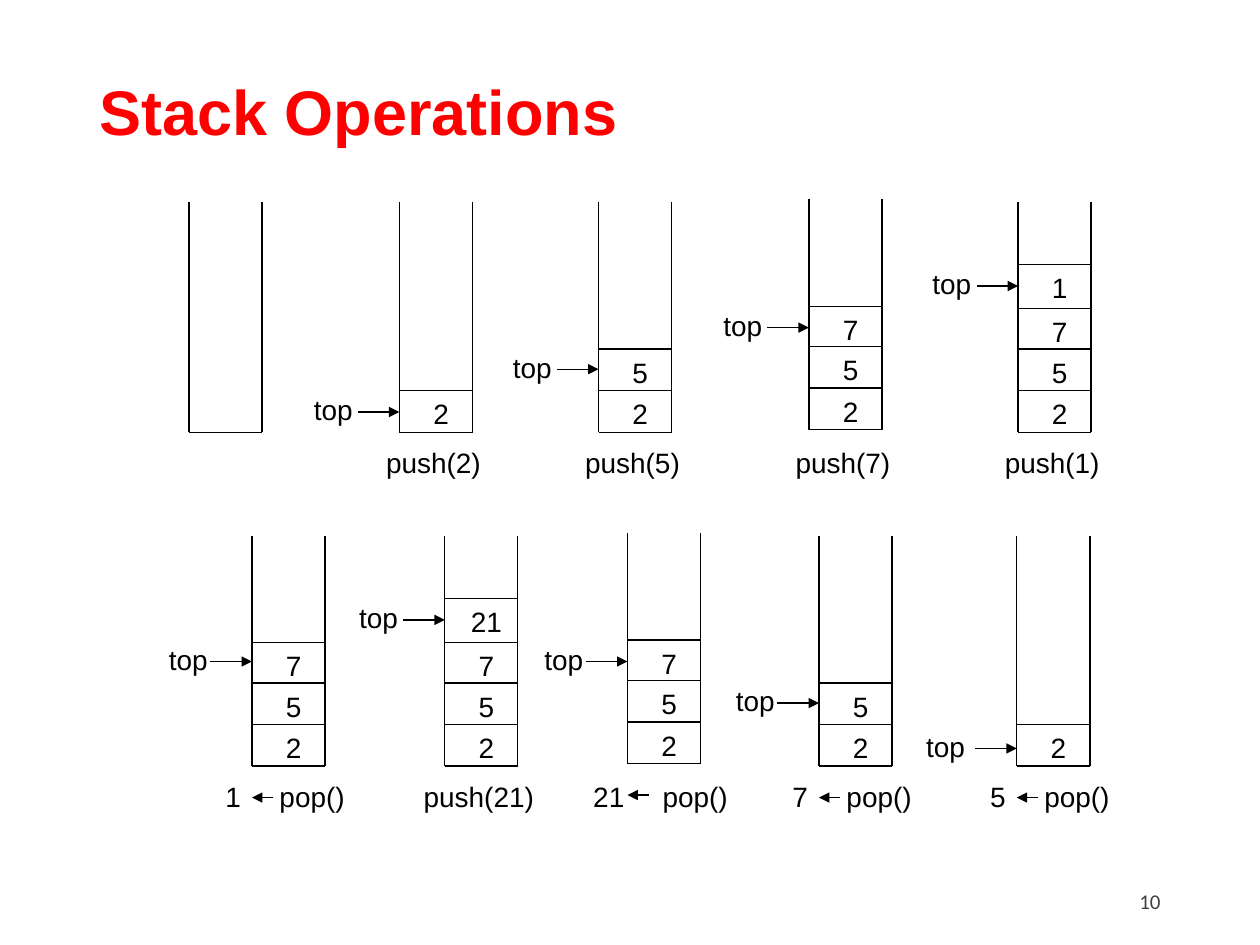
from dataclasses import dataclass

from lxml import etree
from pptx import Presentation
from pptx import util as u
from pptx.dml.color import RGBColor
from pptx.enum import shapes, text
from pptx.oxml import ns

RED = RGBColor(0xFF, 0x00, 0x00)
BLACK = RGBColor(0x00, 0x00, 0x00)
GRAY = RGBColor(0x40, 0x40, 0x40)

WIDTH = 0.58
HEIGHT = 1.83
LEVELS = (1.5, 1.17, 0.85, 0.5)  # upper edge of each cell, below the rim
ARROWS = (1.67, 1.33, 1.0, 0.67)  # arrow to the top cell, below the row start
LABEL = 0.37  # height of a one-line label


@dataclass
class Stack:
    x: float
    cells: tuple = ()  # from the bottom up
    call: str = ""
    popped: str = ""
    lift: float = 0.0  # how far the stack sits above its row
    gap: float = 0.78  # from the label "top" to the stack
    drop: float = 0.0  # how far the arrow sits below its usual place


@dataclass
class Row:
    y: float
    stacks: tuple


ROWS = (
    Row(1.6, (
        Stack(1.5),
        Stack(3.17, ("2",), "push(2)"),
        Stack(4.75, ("2", "5"), "push(5)"),
        Stack(6.42, ("2", "5", "7"), "push(7)", lift=0.02),
        Stack(8.08, ("2", "5", "7", "1"), "push(1)"),
    )),
    Row(4.25, (
        Stack(2, ("2", "5", "7"), "pop()", "1", gap=0.76),
        Stack(3.53, ("2", "5", "7", "21"), "push(21)"),
        Stack(4.98, ("2", "5", "7"), "pop()", "21", lift=0.02, gap=0.76),
        Stack(6.5, ("2", "5"), "pop()", "7", gap=0.76),
        Stack(8.07, ("2",), "pop()", "5", gap=0.82, drop=0.02),
    )),
)


def write(slide, words: str, x: float, y: float, w: float, h: float = LABEL, *,
          size: float = 16, font: str = "Arial", color: RGBColor = BLACK,
          bold: bool = False, align=text.PP_ALIGN.CENTER, wrap: bool = False,
          anchor=text.MSO_ANCHOR.TOP, pitch: float = 1.0, tab: float = 0) -> None:
    box = slide.shapes.add_textbox(*map(u.Inches, (x, y, w, h)))
    frame = box.text_frame
    frame.word_wrap = wrap
    fit = text.MSO_AUTO_SIZE
    frame.auto_size = fit.NONE if wrap else fit.SHAPE_TO_FIT_TEXT
    frame.vertical_anchor = anchor
    par = frame.paragraphs[0]
    par.alignment = align
    par.line_spacing = pitch
    run = par.add_run()
    run.text = words
    run.font.name = font
    run.font.size = u.Pt(size)
    run.font.bold = bold
    run.font.color.rgb = color
    if tab:
        stops = etree.SubElement(par._p.get_or_add_pPr(), ns.qn("a:tabLst"))
        etree.SubElement(stops, ns.qn("a:tab"), pos=str(u.Inches(tab)), algn="l")


def rule(host, x1: float, y1: float, x2: float, y2: float, head: bool = False) -> None:
    """Draw a thin line on a slide or in a group, with an arrowhead at its end if asked."""
    line = host.shapes.add_connector(
        shapes.MSO_CONNECTOR.STRAIGHT, *map(u.Inches, (x1, y1, x2, y2)))
    line.line.color.rgb = BLACK
    line.line.width = u.Pt(0.75)
    if head:
        etree.SubElement(line.line._get_or_add_ln(), ns.qn("a:tailEnd"), type="triangle")
    etree.SubElement(line._element.spPr, ns.qn("a:effectLst"))


def draw(slide, row: Row, stack: Stack) -> None:
    left, right = stack.x, stack.x + WIDTH
    rim = row.y - stack.lift
    floor = rim + HEIGHT
    walls = slide.shapes.add_group_shape()
    for side in (left, right):
        rule(walls, side, rim, side, floor)
    rule(walls, left, floor, right, floor)
    if not stack.cells:
        return

    for level, cell in zip(LEVELS, stack.cells):
        rule(slide, left, rim + level, right, rim + level)
        wide = 0.19 + 0.13 * len(cell)
        write(slide, cell, left + 0.33 - wide / 2, rim + level, wide)

    y = row.y + ARROWS[len(stack.cells) - 1] + stack.drop
    write(slide, "top", left - stack.gap, y - 0.2, 0.51)
    rule(slide, left - 0.33, y, left, y, head=True)
    sign(slide, row, stack)


def sign(slide, row: Row, stack: Stack) -> None:
    """Put the call, and the value it returns, under the stack."""
    y, mid = row.y + 1.89, stack.x + 0.27
    if stack.popped:
        digits = len(stack.popped)
        wide = 1.04 + 0.12 * digits
        write(slide, f"{stack.popped}\t{stack.call}", mid - wide / 2, y, wide,
              align=text.PP_ALIGN.LEFT, tab=0.31 + 0.12 * digits)
        tip = row.y - stack.lift + 2.08
        rule(slide, stack.x + 0.17, tip, stack.x, tip, head=True)
    else:
        wide = 0.95 + 0.13 * (len(stack.call) - 7)
        write(slide, stack.call, mid - wide / 2, y, wide)


def main() -> None:
    deck = Presentation()
    deck.slide_width, deck.slide_height = u.Inches(10), u.Inches(7.5)
    slide = deck.slides.add_slide(deck.slide_layouts[6])
    write(slide, "Stack Operations", 0.69, 0.52, 8.62, 0.79, size=36, color=RED,
          bold=True, align=text.PP_ALIGN.LEFT, wrap=True,
          anchor=text.MSO_ANCHOR.MIDDLE, pitch=0.9)
    for row in ROWS:
        for stack in row.stacks:
            draw(slide, row, stack)
    write(slide, "10", 7.06, 6.95, 2.25, 0.4, size=12, font="Calibri", color=GRAY,
          align=text.PP_ALIGN.RIGHT, wrap=True, anchor=text.MSO_ANCHOR.MIDDLE)
    deck.save("out.pptx")


if __name__ == "__main__":
    main()
